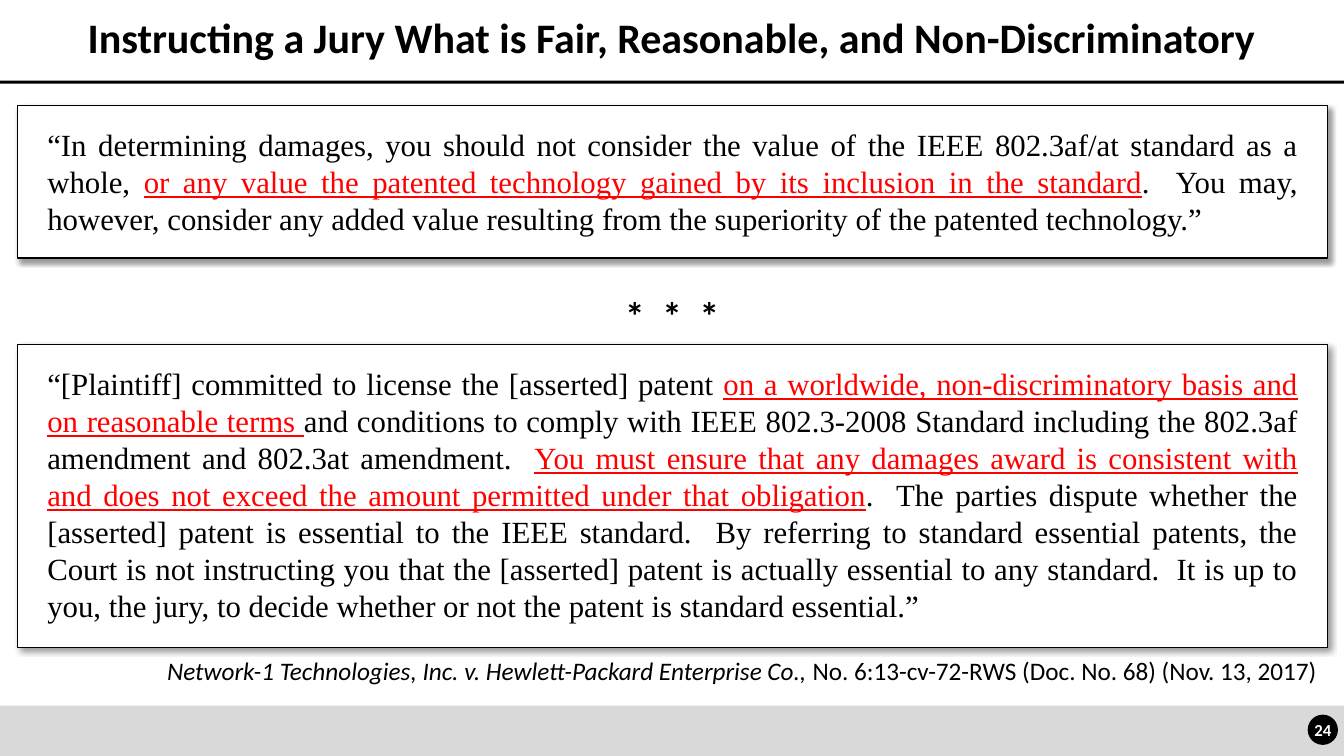
from lxml import etree
from pptx import Presentation
from pptx.dml.color import RGBColor
from pptx.enum.shapes import MSO_SHAPE
from pptx.enum.text import MSO_ANCHOR, MSO_AUTO_SIZE, PP_ALIGN
from pptx.oxml.ns import qn
from pptx.util import Inches, Pt

BLACK = RGBColor(0x00, 0x00, 0x00)
WHITE = RGBColor(0xFF, 0xFF, 0xFF)
RED = RGBColor(0xFF, 0x00, 0x00)
GRAY = RGBColor(0xD9, 0xD9, 0xD9)

RECT, OVAL = MSO_SHAPE.RECTANGLE, MSO_SHAPE.OVAL
TOP, MIDDLE = MSO_ANCHOR.TOP, MSO_ANCHOR.MIDDLE
CENTER, RIGHT, JUSTIFY = PP_ALIGN.CENTER, PP_ALIGN.RIGHT, PP_ALIGN.JUSTIFY
NO_AUTOFIT = MSO_AUTO_SIZE.NONE

SLIDE_W, SLIDE_H = 13.33, 7.5
QUOTE_X, QUOTE_W = 0.17, 13

TITLE = "Instructing a Jury What is Fair, Reasonable, and Non-Discriminatory"
# Each run is its text followed by the format that sets it apart.
KEY = {"color": RED, "underline": True}
VALUE_QUOTE = [
    ("“In determining damages, you should not consider the value of the IEEE "
     "802.3af/at standard as a whole, ", {}),
    ("or any value the patented technology gained by its inclusion in the standard", KEY),
    (".  You may, however, consider any added value resulting from the "
     "superiority of the patented technology.”", {}),
]
LICENSE_QUOTE = [
    ("“[Plaintiff] committed to license the [asserted] patent ", {}),
    ("on a worldwide, non-discriminatory basis and on reasonable terms ", KEY),
    ("and conditions to comply with IEEE 802.3-2008 Standard including the "
     "802.3af amendment and 802.3at amendment.  ", {}),
    ("You must ensure that any damages award is consistent with and does not "
     "exceed the amount permitted under that obligation", KEY),
    (".  The parties dispute whether the [asserted] patent is essential to the "
     "IEEE standard.  By referring to standard essential patents, the Court is "
     "not instructing you that the [asserted] patent is actually essential to "
     "any standard.  It is up to you, the jury, to decide whether or not the "
     "patent is standard essential.”", {}),
]
CITATION = [
    ("Network-1 Technologies, Inc. v. Hewlett-Packard Enterprise Co., ", {"italic": True}),
    ("No. 6:13-cv-72-RWS (Doc. No. 68) (Nov. 13, 2017)", {}),
]


def write(tf, runs, size, font="Calibri", color=BLACK, bold=False, align=CENTER,
          anchor=TOP, insets=(0.1, 0.05), wrap=True, line_spacing=None):
    """Fill a text frame with one paragraph, given as a string or a list of runs."""
    tf.auto_size = NO_AUTOFIT
    tf.word_wrap = wrap
    tf.vertical_anchor = anchor
    tf.margin_left = tf.margin_right = Inches(insets[0])
    tf.margin_top = tf.margin_bottom = Inches(insets[1])
    p = tf.paragraphs[0]
    p.alignment = align
    p.line_spacing = line_spacing
    for text, style in [(runs, {})] if isinstance(runs, str) else runs:
        r = p.add_run()
        r.text = text
        r.font.name = font
        r.font.size = Pt(size)
        r.font.bold = bold
        r.font.italic = style.get("italic", False)
        r.font.underline = style.get("underline", False)
        r.font.color.rgb = style.get("color", color)


def add_text(s, x, y, w, h, runs, size, **style):
    box = s.shapes.add_textbox(Inches(x), Inches(y), Inches(w), Inches(h))
    write(box.text_frame, runs, size, **style)


def add_block(s, kind, x, y, w, h, fill):
    sp = s.shapes.add_shape(kind, Inches(x), Inches(y), Inches(w), Inches(h))
    sp.fill.solid()
    sp.fill.fore_color.rgb = fill
    sp.line.fill.background()
    sp.shadow.inherit = False
    return sp


def add_drop_shadow(sp):
    effects = sp._element.spPr.find(qn("a:effectLst"))
    shadow = etree.SubElement(effects, qn("a:outerShdw"), blurRad=str(Pt(4)),
                              dist=str(Pt(3)), dir=str(45 * 60000),
                              algn="tl", rotWithShape="0")
    color = etree.SubElement(shadow, qn("a:srgbClr"), val=str(BLACK))
    etree.SubElement(color, qn("a:alpha"), val="40000")


def add_header(s, x, y, w, h):
    add_block(s, RECT, x, y + h, w, 0.03, BLACK)
    title = s.shapes.title
    title.left, title.top = Inches(x), Inches(y)
    title.width, title.height = Inches(w), Inches(h)
    write(title.text_frame, TITLE, 30, bold=True, anchor=MIDDLE, line_spacing=0.9)


def add_footer(s, x, y, w, h):
    add_block(s, RECT, x, y, w, h, GRAY)
    badge = x + w - 0.36
    add_block(s, OVAL, badge, y + 0.09, 0.3, 0.3, BLACK)
    add_text(s, badge - 0.05, y + 0.04, 0.4, 0.4, "24", 12, color=WHITE,
             bold=True, anchor=MIDDLE, insets=(0, 0))


def add_quote(s, x, y, w, h, runs):
    sp = add_block(s, RECT, x, y, w, h, WHITE)
    sp.line.color.rgb = BLACK
    sp.line.width = Pt(0.75)
    add_drop_shadow(sp)
    write(sp.text_frame, runs, 22, font="Times New Roman", align=JUSTIFY,
          insets=(0.3, 0.2))


def main():
    prs = Presentation()
    prs.slide_width, prs.slide_height = Inches(SLIDE_W), Inches(SLIDE_H)
    s = prs.slides.add_slide(prs.slide_layouts[5])
    add_footer(s, 0, 7, SLIDE_W, 0.5)
    add_header(s, 0, 0, SLIDE_W, 0.8)
    add_quote(s, QUOTE_X, 1.05, QUOTE_W, 1.51, VALUE_QUOTE)
    add_text(s, 6.09, 2.84, 1.15, 0.57, "*  *  *", 28, bold=True, wrap=False)
    add_quote(s, QUOTE_X, 3.42, QUOTE_W, 3, LICENSE_QUOTE)
    add_text(s, 1.43, 6.45, 11.73, 0.4, CITATION, 18, align=RIGHT, wrap=False)
    prs.save("out.pptx")


if __name__ == "__main__":
    main()
